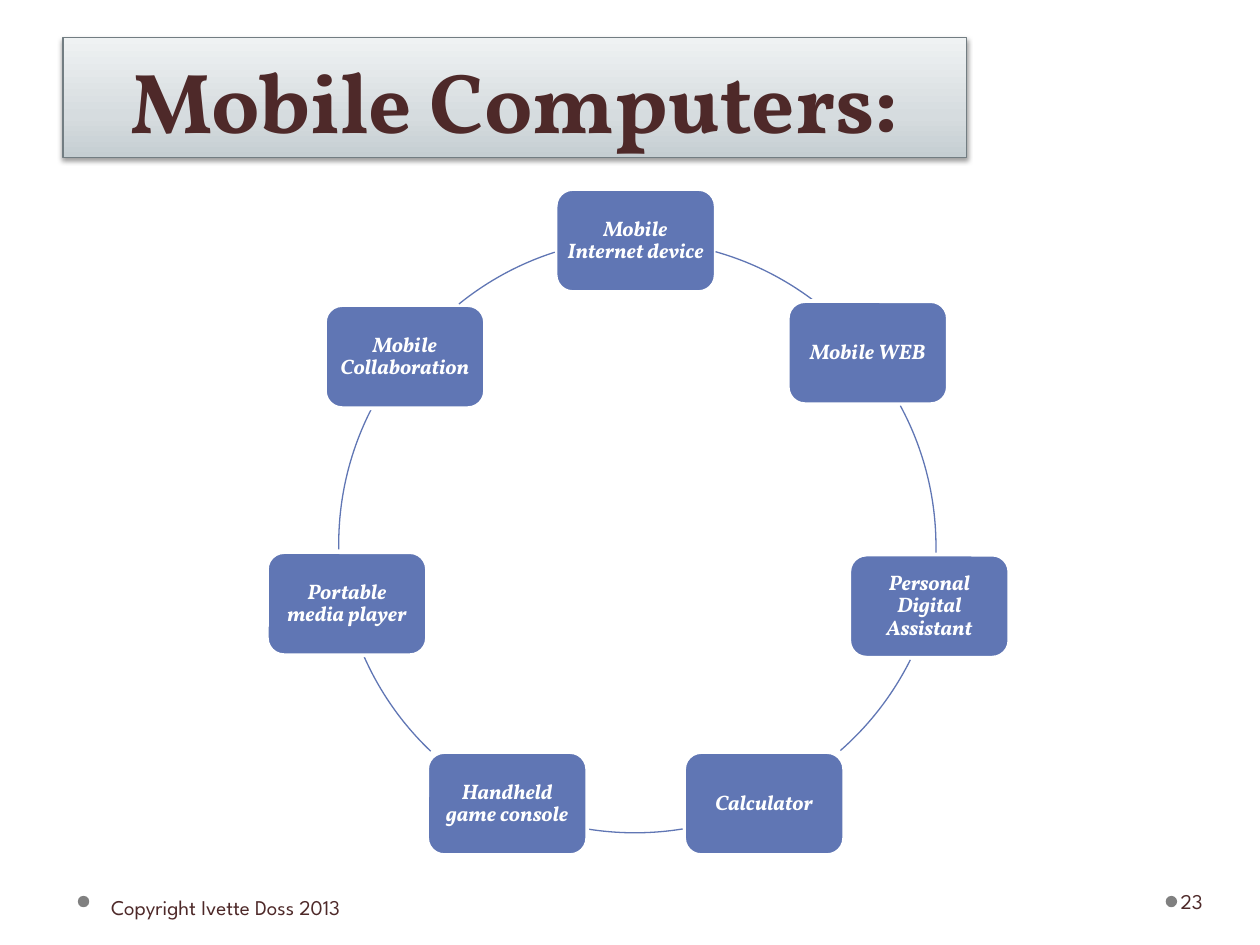
import pptx
import pptx.util
import pptx.dml.color
import pptx.enum.shapes
import pptx.enum.text
import pptx.oxml
import pptx.oxml.ns

Cm, Pt = pptx.util.Cm, pptx.util.Pt
Kind = pptx.enum.shapes.MSO_SHAPE
Align = pptx.enum.text.PP_ALIGN
Anchor = pptx.enum.text.MSO_ANCHOR

HUES = {"blue": "6076B4", "white": "FFFFFF", "brown": "4E2929",
        "dot": "808080", "edge": "727D82", "shade": "000000"}
FADE = [(0, "C5CED2"), (35, "D6DCDF"), (100, "EFF2F3")]
HEAD, BODY = "Vollkorn", "League Spartan"

TITLE = "Mobile Computers:"
# Label, left and top of the box
NODES = [
    ("Mobile Internet device", 11.2, 3.81),
    ("Mobile WEB", 15.88, 6.07),
    ("Personal Digital Assistant", 17.12, 11.18),
    ("Calculator", 13.79, 15.16),
    ("Handheld game console", 8.61, 15.16),
    ("Portable media player", 5.38, 11.13),
    ("Mobile Collaboration", 6.55, 6.15),
]
NODE_W, NODE_H = 3.23, 2.08
# Left and top of the full circle, then start and end in clockwise degrees
ARCS = [
    (6.83, 4.85, 285.8, 306.9),
    (6.93, 5.05, 331.6, 1.2),
    (7.04, 4.67, 26.5, 48.8),
    (6.83, 4.85, 80.7, 99.3),
    (6.83, 4.85, 133.6, 156.2),
    (6.83, 5.0, 179, 207.1),
    (7.04, 4.8, 231, 252.2),
]
RING = 11.94
DOTS = [23.5, 1.57]
# Text, left, top, width, height, left and right inset
FOOT = [
    ("Copyright Ivette Doss 2013", 2.11, 17.78, 9.86, 1.02, 0.13, 0.25),
    ("23", 23.72, 17.65, 1.55, 1.02, 0.08, 0.13),
]


def tint(name):
    return pptx.dml.color.RGBColor.from_string(HUES[name])


def write(shape, text, *, size=12, font=BODY, hue="brown", bold=False,
          slant=False, align=Align.LEFT, anchor=Anchor.MIDDLE,
          gap=None, pads=(0.13, 0.13)):
    frame = shape.text_frame
    frame.word_wrap = True
    frame.auto_size = pptx.enum.text.MSO_AUTO_SIZE.NONE
    frame.vertical_anchor = anchor
    frame.margin_left, frame.margin_right = map(Cm, pads)
    frame.margin_top = frame.margin_bottom = Cm(0.13)
    para = frame.paragraphs[0]
    para.alignment = align
    para.line_spacing = gap
    run = para.add_run()
    run.text = text
    face = run.font
    face.name, face.size = font, Pt(size)
    face.bold, face.italic = bold, slant
    face.color.rgb = tint(hue)


def draw(slide, kind, place, fill=None, line=None, width=0.75):
    shape = slide.shapes.add_shape(kind, *map(Cm, place))
    shape.shadow.inherit = False
    if fill:
        shape.fill.solid()
        shape.fill.fore_color.rgb = tint(fill)
    else:
        shape.fill.background()
    if line:
        shape.line.color.rgb = tint(line)
        shape.line.width = Pt(width)
    else:
        shape.line.fill.background()
    return shape


def add_title(slide):
    title = slide.shapes.title
    title.left, title.top = Cm(1.27), Cm(0.76)
    title.width, title.height = Cm(18.21), Cm(2.41)
    title.fill.gradient()
    title.fill.gradient_angle = 90
    space = pptx.oxml.ns.nsdecls("a")
    props = title.element.spPr
    stops = props.find(".//" + pptx.oxml.ns.qn("a:gsLst"))
    for stop in list(stops):
        stops.remove(stop)
    for spot, hue in FADE:
        stops.append(pptx.oxml.parse_xml(
            f'<a:gs {space} pos="{spot * 1000}"><a:srgbClr val="{hue}"/></a:gs>'))
    title.line.color.rgb = tint("edge")
    title.line.width = Pt(0.75)
    props.append(pptx.oxml.parse_xml(
        f'<a:effectLst {space}><a:outerShdw blurRad="{Pt(3.1)}" dist="{Pt(1.6)}"'
        f' dir="5400000" rotWithShape="0"><a:srgbClr val="{HUES["shade"]}">'
        '<a:alpha val="38000"/></a:srgbClr></a:outerShdw></a:effectLst>'))
    write(title, TITLE, size=48.6, font=HEAD, bold=True, align=Align.CENTER,
          anchor=Anchor.BOTTOM, gap=Pt(58), pads=(0.25, 0.25))


def main():
    deck = pptx.Presentation()
    deck.slide_width, deck.slide_height = Cm(25.4), Cm(19.05)
    slide = deck.slides.add_slide(deck.slide_layouts[5])
    add_title(slide)

    for left in DOTS:
        draw(slide, Kind.OVAL, (left, 18.06, 0.23, 0.23), fill="dot")

    for (label, x, y), (left, top, start, end) in zip(NODES, ARCS):
        node = draw(slide, Kind.ROUNDED_RECTANGLE, (x, y, NODE_W, NODE_H),
                    fill="blue", line="white", width=2.25)
        write(node, label, font=HEAD, hue="white", bold=True, slant=True,
              align=Align.CENTER, gap=0.9)
        arc = draw(slide, Kind.ARC, (left, top, RING, RING), line="blue")
        # An angle is stored in 60000ths of a degree, set here in 100000ths
        arc.adjustments[0], arc.adjustments[1] = start * 0.6, end * 0.6

    for text, x, y, wide, high, *pads in FOOT:
        box = slide.shapes.add_textbox(Cm(x), Cm(y), Cm(wide), Cm(high))
        write(box, text, pads=pads)

    deck.save("out.pptx")


if __name__ == "__main__":
    main()
